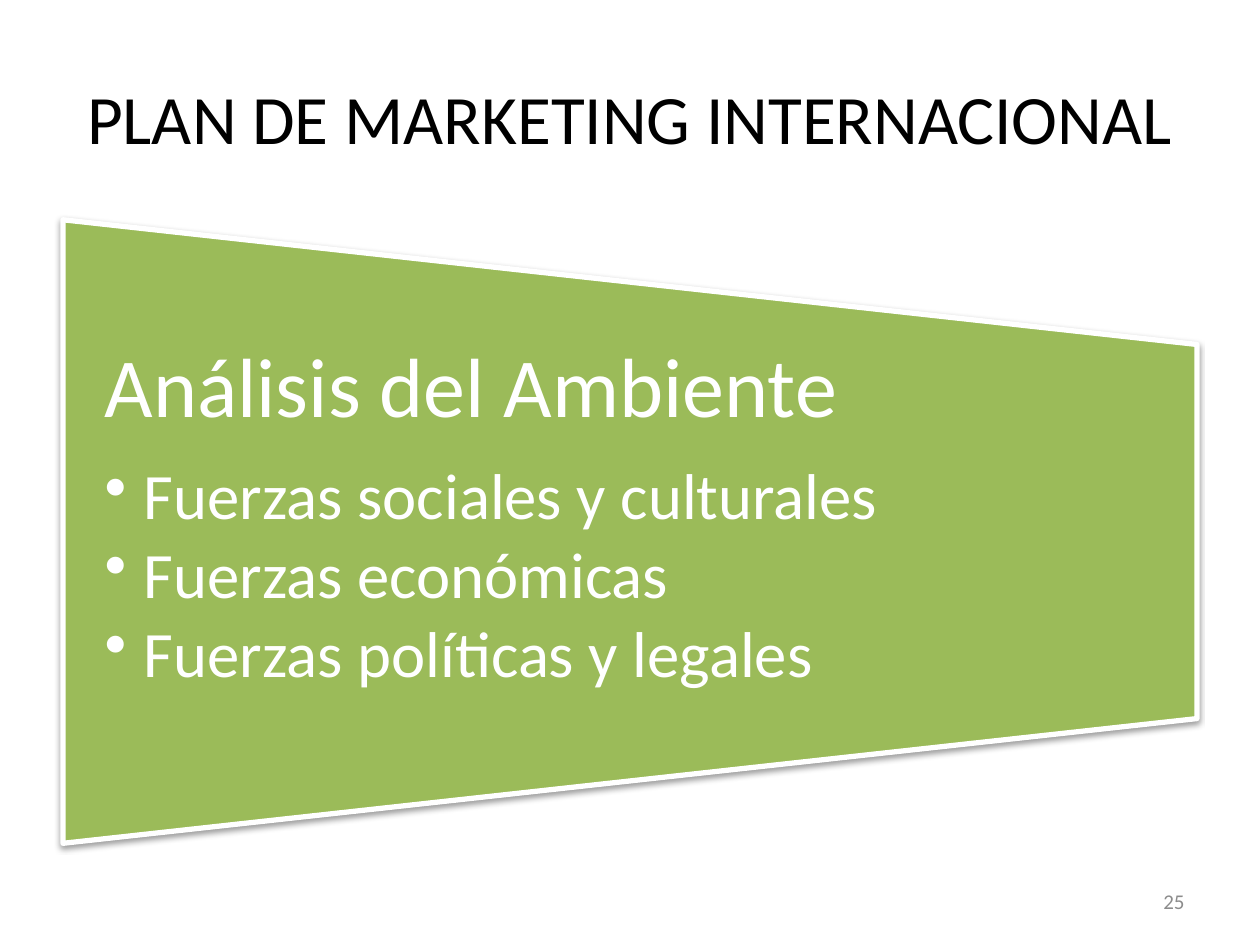
from lxml import etree
from pptx import Presentation
from pptx.dml.color import RGBColor
from pptx.enum.shapes import MSO_SHAPE
from pptx.enum.text import MSO_ANCHOR, MSO_AUTO_SIZE, PP_ALIGN
from pptx.oxml.ns import qn
from pptx.util import Cm, Pt

# Content
TITLE = "PLAN DE MARKETING INTERNACIONAL"
HEADING = "Análisis del Ambiente"
FORCES = [
    "Fuerzas sociales y culturales",
    "Fuerzas económicas",
    "Fuerzas políticas y legales",
]
PAGE_NUMBER = "25"

# Look
FONT = "Calibri"
BLACK = RGBColor(0x00, 0x00, 0x00)
WHITE = RGBColor(0xFF, 0xFF, 0xFF)
GREEN = RGBColor(0x9B, 0xBB, 0x59)
GREY = RGBColor(0x8C, 0x8C, 0x8C)
LEFT, CENTER, RIGHT = PP_ALIGN.LEFT, PP_ALIGN.CENTER, PP_ALIGN.RIGHT
TOP, MIDDLE = MSO_ANCHOR.TOP, MSO_ANCHOR.MIDDLE
TRAPEZOID = MSO_SHAPE.FLOWCHART_MANUAL_OPERATION

# Places in centimetres
MARGIN, CONTENT_WIDTH = 1.27, 22.86
PANEL_TOP, PANEL_HEIGHT = 4.43, 12.57
BULLET_INDENT = 0.79


def place(box, left, top, width, height):
    box.left, box.top = Cm(left), Cm(top)
    box.width, box.height = Cm(width), Cm(height)


def prepare(frame, anchor=TOP):
    frame.word_wrap = True
    frame.auto_size = MSO_AUTO_SIZE.NONE
    frame.vertical_anchor = anchor


def write(para, text, size, color, align=LEFT, spacing=1.0, after=0, bullet=False):
    if bullet:
        props = para._p.get_or_add_pPr()
        props.set("marL", str(Cm(BULLET_INDENT)))
        props.set("indent", str(-Cm(BULLET_INDENT)))
        etree.SubElement(props, qn("a:buChar")).set("char", "•")
    para.alignment = align
    para.line_spacing = spacing
    para.space_before = Pt(0)
    para.space_after = Pt(after)
    span = para.add_run()
    span.text = text
    span.font.name = FONT
    span.font.size = Pt(size)
    span.font.color.rgb = color


def add_soft_shadow(shape):
    shape.shadow.inherit = False
    effects = shape._element.spPr.find(qn("a:effectLst"))
    shadow = etree.SubElement(
        effects, qn("a:outerShdw"), blurRad=str(Pt(3.1)), dist=str(Pt(1.6)),
        dir="5400000", rotWithShape="0")
    color = etree.SubElement(shadow, qn("a:srgbClr"), val=str(BLACK))
    etree.SubElement(color, qn("a:alpha"), val="38000")


deck = Presentation()
deck.slide_width, deck.slide_height = Cm(25.4), Cm(19.05)
page = deck.slides.add_slide(deck.slide_layouts[5])

# Title
title = page.shapes.title
place(title, MARGIN, 0.76, CONTENT_WIDTH, 3.18)
prepare(title.text_frame, MIDDLE)
write(title.text_frame.paragraphs[0], TITLE, 39.6, BLACK, align=CENTER)

# Green panel: a trapezoid turned a quarter about its centre
shift = (CONTENT_WIDTH - PANEL_HEIGHT) / 2
panel = page.shapes.add_shape(
    TRAPEZOID, Cm(MARGIN + shift), Cm(PANEL_TOP - shift),
    Cm(PANEL_HEIGHT), Cm(CONTENT_WIDTH))
panel.rotation = 270
panel.fill.solid()
panel.fill.fore_color.rgb = GREEN
panel.line.color.rgb = WHITE
panel.line.width = Pt(3)
add_soft_shadow(panel)

# Heading and bullets on the panel
body = page.shapes.add_textbox(Cm(MARGIN), Cm(6.96), Cm(CONTENT_WIDTH), Cm(7.54))
frame = body.text_frame
prepare(frame)
frame.margin_left = frame.margin_right = Cm(0.84)
frame.margin_top = frame.margin_bottom = 0
write(frame.paragraphs[0], HEADING, 48, WHITE, spacing=0.9, after=16)
for force in FORCES:
    write(frame.add_paragraph(), force, 37, WHITE, spacing=0.9, after=5, bullet=True)

# Page number
number = page.shapes.add_textbox(Cm(18.2), Cm(17.66), Cm(5.93), Cm(1.01))
prepare(number.text_frame, MIDDLE)
write(number.text_frame.paragraphs[0], PAGE_NUMBER, 12, GREY, align=RIGHT)

deck.save("out.pptx")
